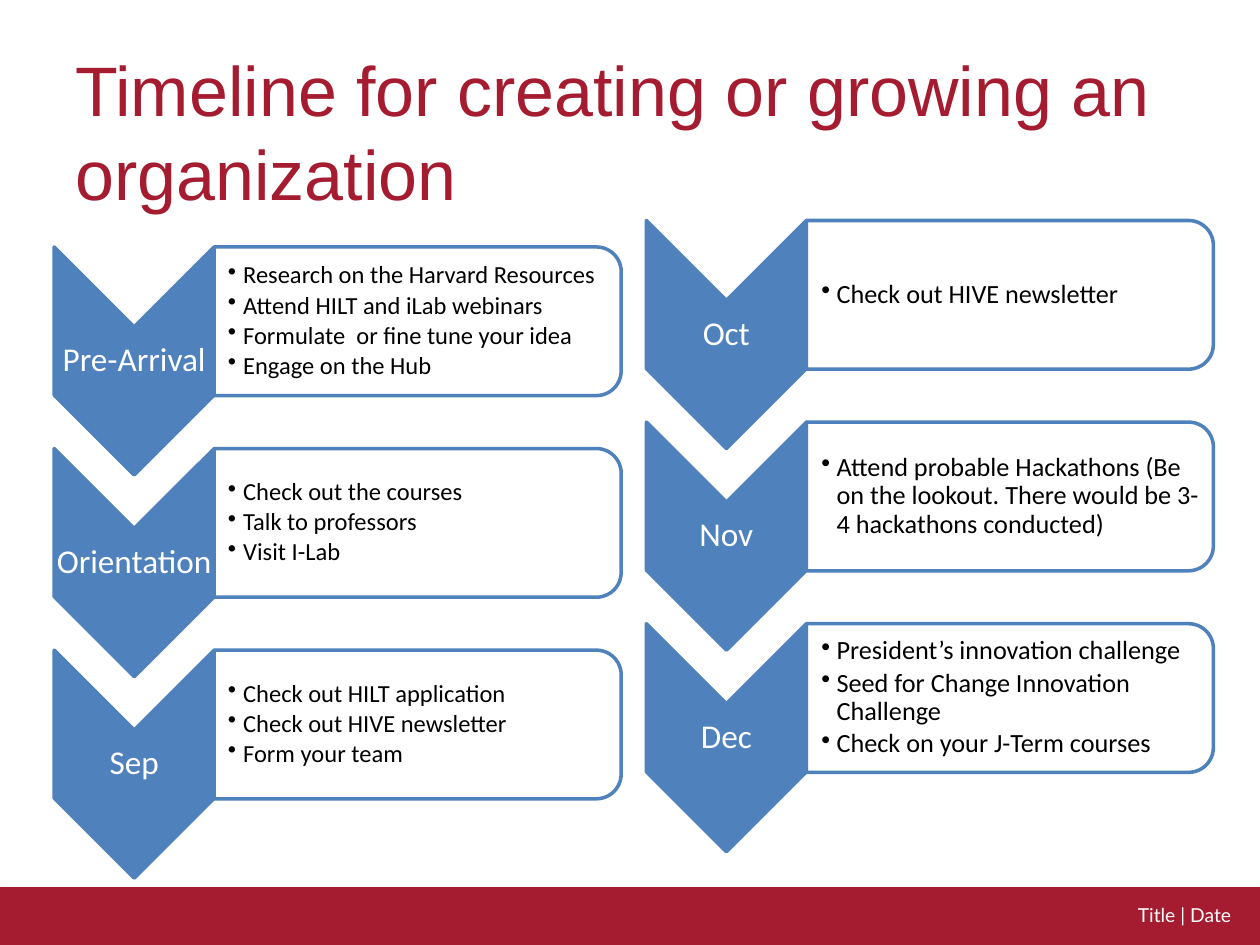
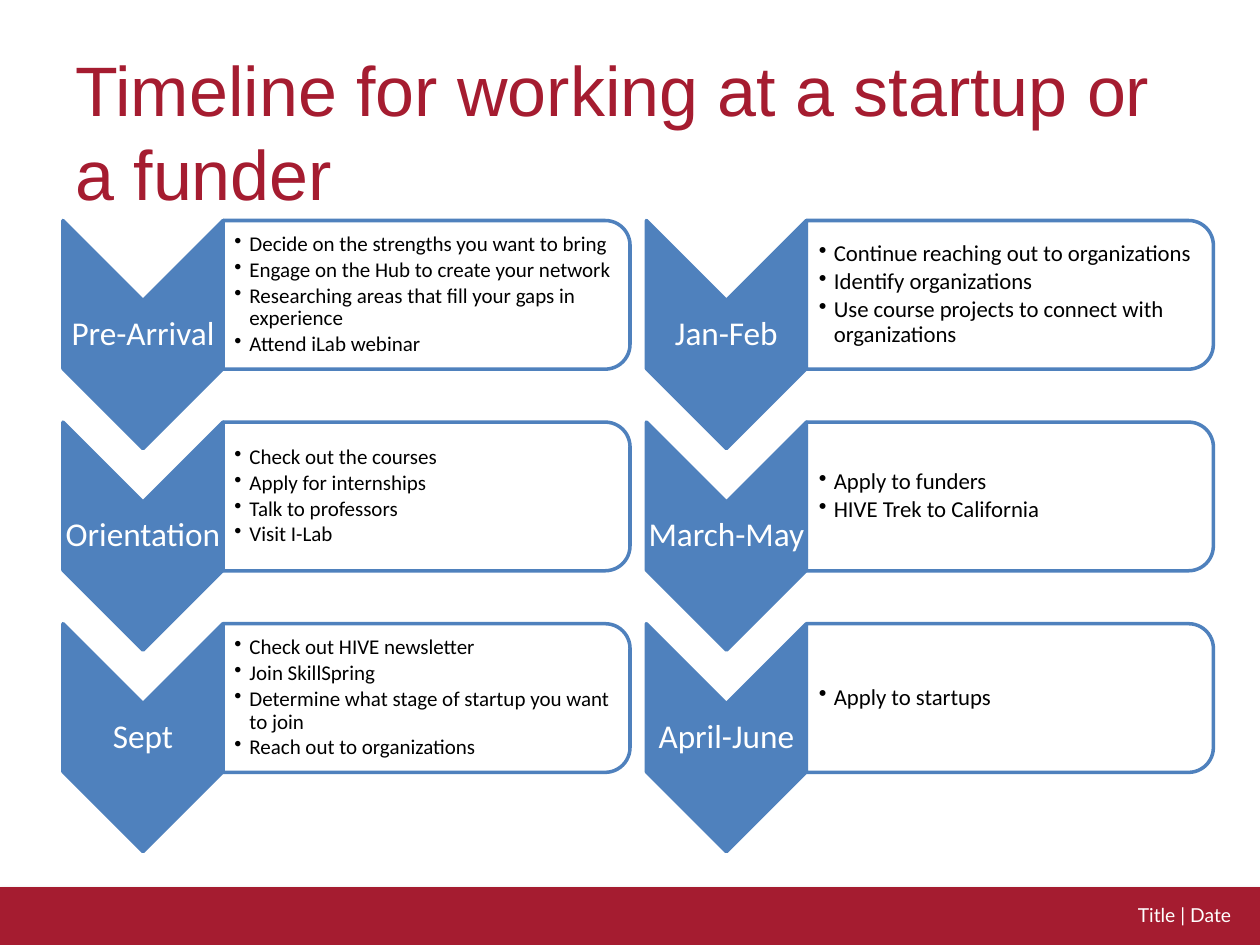
from dataclasses import dataclass

from lxml.etree import SubElement
from pptx import Presentation
from pptx.dml.color import RGBColor
from pptx.enum.shapes import MSO_SHAPE
from pptx.enum.text import MSO_ANCHOR, PP_ALIGN
from pptx.oxml.ns import qn
from pptx.util import Inches, Pt

# Content: each column has its left, top, bullet size, bullet inset and stages
FOOTER = "Title | Date"
TIMELINES = [
    ("Timeline for creating or growing an organization", [
        (0.43, 1.96, 14, 0.11, [
            ("Pre-Arrival", ["Research on the Harvard Resources",
                             "Attend HILT and iLab webinars",
                             "Formulate  or fine tune your idea",
                             "Engage on the Hub"]),
            ("Orientation", ["Check out the courses",
                             "Talk to professors",
                             "Visit I-Lab"]),
            ("Sep", ["Check out HILT application",
                     "Check out HIVE newsletter",
                     "Form your team"]),
        ]),
        (5.13, 1.75, 15, 0.12, [
            ("Oct", ["Check out HIVE newsletter"]),
            ("Nov", ["Attend probable Hackathons (Be on the lookout. "
                     "There would be 3-4 hackathons conducted)"]),
            ("Dec", ["President’s innovation challenge",
                     "Seed for Change Innovation Challenge",
                     "Check on your J-Term courses"]),
        ]),
    ]),
    ("Timeline for working at a startup or a funder", [
        (0.5, 1.75, 12, 0.09, [
            ("Pre-Arrival", ["Decide on the strengths you want to bring",
                             "Engage on the Hub to create your network",
                             "Researching areas that fill your gaps in experience",
                             "Attend iLab webinar"]),
            ("Orientation", ["Check out the courses",
                             "Apply for internships",
                             "Talk to professors",
                             "Visit I-Lab"]),
            ("Sept", ["Check out HIVE newsletter",
                      "Join SkillSpring",
                      "Determine what stage of startup you want to join",
                      "Reach out to organizations"]),
        ]),
        (5.13, 1.75, 13, 0.1, [
            ("Jan-Feb", ["Continue reaching out to organizations",
                         "Identify organizations",
                         "Use course projects to connect with organizations"]),
            ("March-May", ["Apply to funders",
                           "HIVE Trek to California"]),
            ("April-June", ["Apply to startups"]),
        ]),
    ]),
]


@dataclass(frozen=True)
class Theme:
    crimson: str = "A51C30"
    blue: str = "4F81BD"
    white: str = "FFFFFF"
    black: str = "000000"
    title_font: str = "Arial"
    body_font: str = "Calibri"
    footer_font: str = "Lato"
    title_size: int = 40
    label_size: int = 19
    footer_size: int = 11
    outline: int = 2


THEME = Theme()

# Measures in inches
SLIDE_W, SLIDE_H = 10, 7.5
BAND_H = 0.46
ROW_PITCH = 1.6
CHEVRON_W, CHEVRON_H = 1.27, 1.81
CARD_W, CARD_H = 3.23, 1.18
LABEL_H = 0.54
CARD_PAD = 0.06
BULLET_INDENT = 0.12
TIGHT = 0.01


def color(value):
    return RGBColor.from_string(value)


def add_filled(slide, preset, left, top, width, height, fill, outline=None, turned=False):
    """Place a preset in its visible frame; a turned one is rotated a quarter."""
    w, h = (height, width) if turned else (width, height)
    shape = slide.shapes.add_shape(
        preset, Inches(left + (width - w) / 2), Inches(top + (height - h) / 2),
        Inches(w), Inches(h))
    shape.rotation = 90 if turned else 0
    shape.shadow.inherit = False
    shape.fill.solid()
    shape.fill.fore_color.rgb = color(fill)
    if outline:
        shape.line.color.rgb = color(outline)
        shape.line.width = Pt(THEME.outline)
    else:
        shape.line.fill.background()
    return shape


def add_text(slide, box, lines, font, size, ink, align=PP_ALIGN.LEFT,
             anchor=MSO_ANCHOR.TOP, insets=(0.1, 0.05, 0.1, 0.05),
             spacing=None, after=None, bulleted=False):
    frame = slide.shapes.add_textbox(*map(Inches, box)).text_frame
    frame.word_wrap = True
    frame.vertical_anchor = anchor
    (frame.margin_left, frame.margin_top,
     frame.margin_right, frame.margin_bottom) = map(Inches, insets)
    frame.text = "\n".join(lines)
    for paragraph in frame.paragraphs:
        paragraph.alignment = align
        paragraph.line_spacing = spacing
        props = paragraph._p.get_or_add_pPr()
        if after:
            space = SubElement(props, qn("a:spcAft"))
            SubElement(space, qn("a:spcPct"), val=str(after * 1000))
        if bulleted:
            paragraph.level = 1
            props.set("marL", str(Inches(BULLET_INDENT)))
            props.set("indent", str(-Inches(BULLET_INDENT)))
            SubElement(props, qn("a:buChar"), char="•")
        for run in paragraph.runs:
            run.font.name = font
            run.font.size = Pt(size)
            run.font.color.rgb = color(ink)


def add_band(slide):
    band = add_filled(slide, MSO_SHAPE.RECTANGLE, 0, SLIDE_H - BAND_H,
                      SLIDE_W, BAND_H, THEME.crimson)
    effects = band._element.spPr.find(qn("a:effectLst"))
    shadow = SubElement(effects, qn("a:outerShdw"), blurRad=str(Pt(3.1)),
                        dist=str(Pt(1.8)), dir="5400000", rotWithShape="0")
    tint = SubElement(shadow, qn("a:srgbClr"), val=THEME.black)
    SubElement(tint, qn("a:alpha"), val="35000")
    add_text(slide, (2.67, 7.12, 7.2, 0.29), [FOOTER], THEME.footer_font,
             THEME.footer_size, THEME.white, PP_ALIGN.RIGHT)


def add_stage(slide, left, top, label, tasks, task_size, task_inset):
    # Month marker
    add_filled(slide, MSO_SHAPE.CHEVRON, left, top, CHEVRON_W, CHEVRON_H,
               THEME.blue, THEME.blue, turned=True)
    add_text(slide, (left, top + CHEVRON_W / 2, CHEVRON_W, LABEL_H), [label],
             THEME.body_font, THEME.label_size, THEME.white, PP_ALIGN.CENTER,
             MSO_ANCHOR.MIDDLE, (TIGHT,) * 4, 0.9, 35)
    # Task card
    card_left = left + CHEVRON_W
    card = add_filled(slide, MSO_SHAPE.ROUND_2_SAME_RECTANGLE, card_left, top,
                      CARD_W, CARD_H, THEME.white, THEME.blue, turned=True)
    fill = card._element.spPr.find(qn("a:solidFill"))
    SubElement(fill[0], qn("a:alpha"), val="90000")
    add_text(slide, (card_left, top + CARD_PAD, CARD_W - CARD_PAD,
                     CARD_H - 2 * CARD_PAD), tasks,
             THEME.body_font, task_size, THEME.black,
             anchor=MSO_ANCHOR.MIDDLE, insets=(task_inset, TIGHT, TIGHT, TIGHT),
             spacing=0.9, after=15, bulleted=True)


def main():
    deck = Presentation()
    deck.slide_width, deck.slide_height = Inches(SLIDE_W), Inches(SLIDE_H)
    for title, columns in TIMELINES:
        slide = deck.slides.add_slide(deck.slide_layouts[6])
        add_band(slide)
        add_text(slide, (0.5, 0.32, 9, 1.25), [title], THEME.title_font,
                 THEME.title_size, THEME.crimson,
                 spacing=Pt(1.2 * THEME.title_size))
        for left, top, task_size, task_inset, stages in columns:
            for row, (label, tasks) in enumerate(stages):
                add_stage(slide, left, top + row * ROW_PITCH, label, tasks,
                          task_size, task_inset)
    deck.save("out.pptx")


if __name__ == "__main__":
    main()
